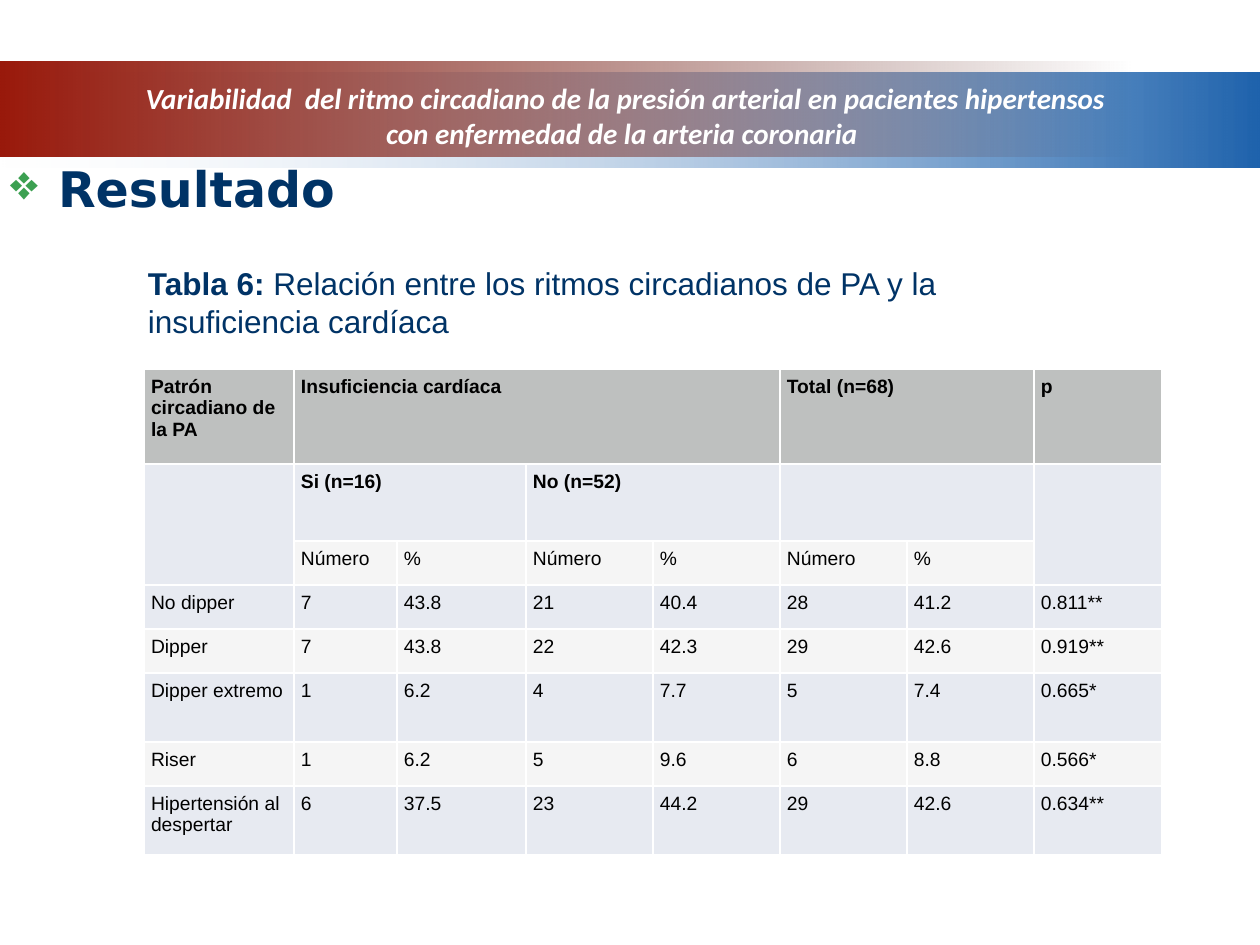
from dataclasses import dataclass

from lxml.etree import SubElement
from pptx import Presentation
from pptx.dml.color import RGBColor
from pptx.enum.shapes import MSO_SHAPE
from pptx.enum.text import MSO_ANCHOR, PP_ALIGN
from pptx.oxml.ns import qn
from pptx.util import Emu, Pt

SCALE = 914400 / 126
HUES = {
    "blue": "1F63AD", "pale": "E3EBF5", "dark": "470C05", "red": "99190B",
    "white": "FFFFFF", "navy": "003366", "green": "3CA051", "black": "000000",
    "head": "BEC0BF", "odd": "E7EAF1", "even": "F5F5F5",
}
FONTS = {
    "title": {"name": "Calibri", "size": Pt(16.6), "bold": True, "italic": True},
    "topic": {"name": "DejaVu Sans", "size": Pt(28), "bold": True},
    "label": {"name": "Arial", "size": Pt(18), "bold": True},
    "plain": {"name": "Arial", "size": Pt(18), "bold": False},
    "strong": {"name": "Arial", "size": Pt(11), "bold": True},
    "cell": {"name": "Arial", "size": Pt(11), "bold": False},
}
SIDES = ("left", "top", "right", "bottom")


@dataclass
class Box:
    left: int
    top: int
    width: int
    height: int


@dataclass
class Band:
    box: Box
    start: str
    end: str
    clear: str


@dataclass
class Words:
    text: str
    font: str
    hue: str


@dataclass
class Note:
    box: Box
    words: list[Words]
    format: dict


@dataclass
class Span:
    row: int
    col: int
    tall: int
    wide: int


BANDS = [
    Band(Box(0, 73, 1260, 95), "blue", "pale", "pale"),
    Band(Box(0, 62, 1134, 95), "dark", "red", "dark"),
]
TITLE = Note(
    Box(116, 76, 1018, 78),
    [Words("Variabilidad  del ritmo circadiano de la presión arterial en pacientes "
           "hipertensos con enfermedad de la arteria coronaria ", "title", "white")],
    {"alignment": PP_ALIGN.CENTER},
)
TOPIC = Note(Box(4, 152, 1242, 786), [Words("Resultado", "topic", "navy")], {})
LABEL = Note(
    Box(142, 258, 921, 86),
    [Words("Tabla 6: ", "label", "navy"),
     Words("Relación entre los ritmos circadianos de PA y la insuficiencia cardíaca",
           "plain", "navy")],
    {},
)
COLS = [150, 103, 129, 127, 127, 127, 127, 128]
ROWS = [95, 77, 44, 44, 44, 69, 44, 69]
SPANS = [
    Span(0, 1, 1, 4), Span(0, 5, 1, 2), Span(1, 0, 2, 1), Span(1, 1, 1, 2),
    Span(1, 3, 1, 2), Span(1, 5, 1, 2), Span(1, 7, 2, 1),
]
DATA = [
    ["Patrón  circadiano de la PA", "Insuficiencia cardíaca", "", "", "",
     "Total (n=68)", "", "p"],
    ["", "Si (n=16)", "", "No (n=52)", "", "", "", ""],
    ["", *["Número", "%"] * 3, ""],
    ["No dipper", "7", "43.8", "21", "40.4", "28", "41.2", "0.811**"],
    ["Dipper", "7", "43.8", "22", "42.3", "29", "42.6", "0.919**"],
    ["Dipper extremo", "1", "6.2", "4", "7.7", "5", "7.4", "0.665*"],
    ["Riser", "1", "6.2", "5", "9.6", "6", "8.8", "0.566*"],
    ["Hipertensión al despertar", "6", "37.5", "23", "44.2", "29", "42.6", "0.634**"],
]


def px(count: int) -> Emu:
    return Emu(round(count * SCALE))


def place(box: Box) -> tuple:
    return px(box.left), px(box.top), px(box.width), px(box.height)


def tint(name: str) -> RGBColor:
    return RGBColor.from_string(HUES[name])


def apply(item, values: dict) -> None:
    for key, value in values.items():
        setattr(item, key, value)


def write(para, words: Words) -> None:
    run = para.add_run()
    run.text = words.text
    apply(run.font, FONTS[words.font])
    run.font.color.rgb = tint(words.hue)


def draw_band(slide, band: Band) -> None:
    shape = slide.shapes.add_shape(MSO_SHAPE.RECTANGLE, *place(band.box))
    shape.shadow.inherit = False
    shape.line.fill.background()
    shape.fill.gradient()
    shape.fill.gradient_angle = 180
    for stop, name in zip(shape.fill.gradient_stops, (band.start, band.end)):
        stop.color.rgb = tint(name)
    for node in shape._element.iter(qn("a:srgbClr")):
        if node.get("val") == HUES[band.clear]:
            SubElement(node, qn("a:alpha"), val="0")


def draw_note(slide, note: Note, anchor=MSO_ANCHOR.TOP):
    frame = slide.shapes.add_textbox(*place(note.box)).text_frame
    apply(frame, {"word_wrap": True, "vertical_anchor": anchor})
    apply(frame, {f"margin_{side}": px(6) for side in SIDES})
    para = frame.paragraphs[0]
    apply(para, note.format)
    for words in note.words:
        write(para, words)
    return para


def add_mark(para, sign: str, hue: str, indent: int) -> None:
    props = para._p.get_or_add_pPr()
    props.set("marL", str(px(indent)))
    props.set("indent", str(-px(indent)))
    color = SubElement(props, qn("a:buClr"))
    SubElement(color, qn("a:srgbClr"), val=HUES[hue])
    SubElement(props, qn("a:buChar"), char=sign)


def draw_edge(cell) -> None:
    props = cell._tc.get_or_add_tcPr()
    for index, tag in enumerate(("a:lnL", "a:lnR", "a:lnT", "a:lnB")):
        line = SubElement(props, qn(tag), w=str(Pt(1)))
        fill = SubElement(line, qn("a:solidFill"))
        SubElement(fill, qn("a:srgbClr"), val=HUES["white"])
        props.insert(index, line)


def draw_cell(cell, words: Words, fill: str) -> None:
    apply(cell, {f"margin_{side}": px(7) for side in SIDES})
    cell.fill.solid()
    cell.fill.fore_color.rgb = tint(fill)
    draw_edge(cell)
    para = cell.text_frame.paragraphs[0]
    if words.text:
        write(para, words)
    else:
        SubElement(para._p, qn("a:endParaRPr"), sz="1100")


def draw_table(slide) -> None:
    box = Box(144, 369, sum(COLS), sum(ROWS))
    table = slide.shapes.add_table(len(ROWS), len(COLS), *place(box)).table
    apply(table, {"first_row": False, "horz_banding": False})
    for col, width in zip(table.columns, COLS):
        col.width = px(width)
    for row, height in zip(table.rows, ROWS):
        row.height = px(height)
    for i, line in enumerate(DATA):
        fill = "head" if i == 0 else "odd" if i % 2 else "even"
        font = "strong" if i < 2 else "cell"
        for j, text in enumerate(line):
            draw_cell(table.cell(i, j), Words(text, font, "black"), fill)
    for span in SPANS:
        last = table.cell(span.row + span.tall - 1, span.col + span.wide - 1)
        table.cell(span.row, span.col).merge(last)


def main() -> None:
    deck = Presentation()
    apply(deck, {"slide_width": px(1260), "slide_height": px(945)})
    slide = deck.slides.add_slide(deck.slide_layouts[6])
    for band in BANDS:
        draw_band(slide, band)
    draw_note(slide, TITLE, MSO_ANCHOR.MIDDLE)
    add_mark(draw_note(slide, TOPIC), "❖", "green", 48)
    draw_table(slide)
    draw_note(slide, LABEL)
    deck.save("out.pptx")


if __name__ == "__main__":
    main()
